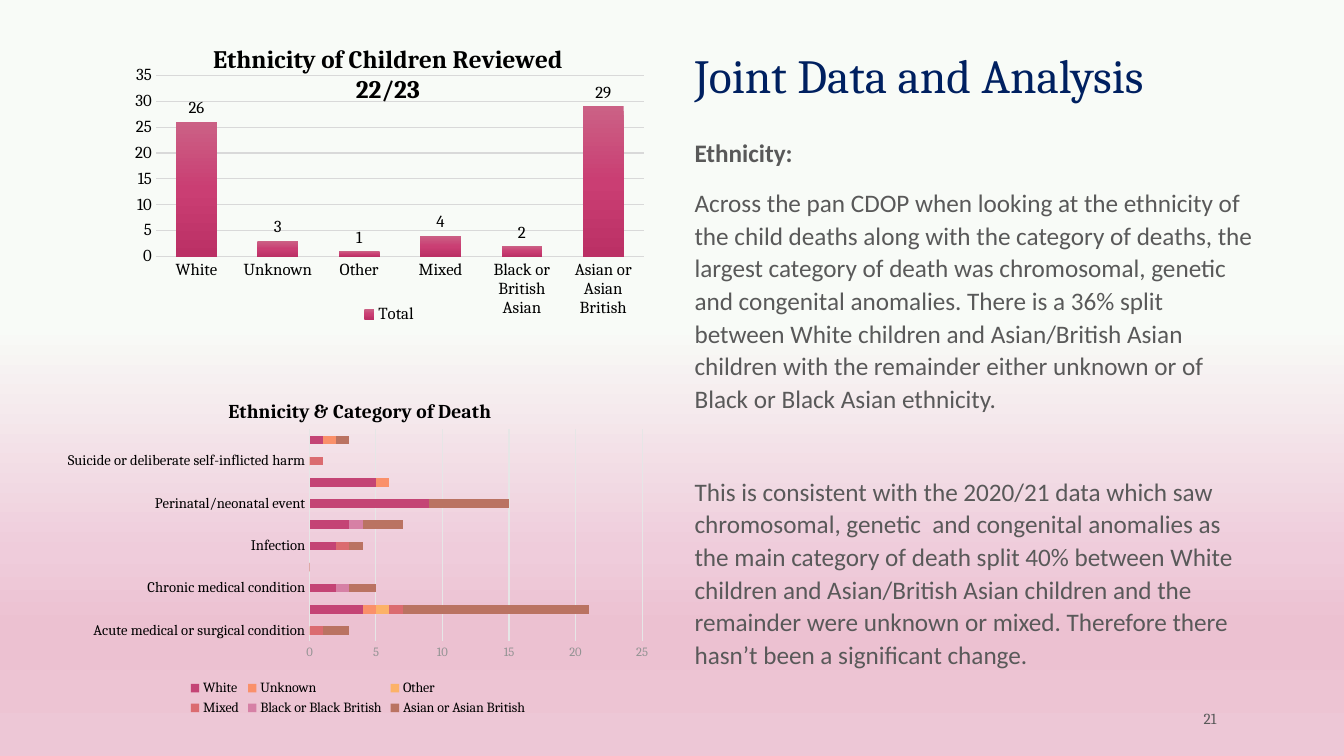
from lxml import etree
from pptx import Presentation
from pptx import util as u
from pptx.chart.data import CategoryChartData
from pptx.dml.color import RGBColor
from pptx.enum import chart as ch, text as t
from pptx.oxml.ns import qn

# Content
HEADING = "Joint Data and Analysis"
PAGE = "21"
BODY = [  # text, bold, line spacing, space before
    ("Ethnicity:", True, 0.9, 0),
    ("Across the pan CDOP when looking at the ethnicity of the child deaths along with the "
     "category of deaths, the largest category of death was chromosomal, genetic and congenital "
     "anomalies. There is a 36% split between White children and Asian/British Asian children "
     "with the remainder either unknown or of Black or Black Asian ethnicity.", False, 1.08, 12),
    ("This is consistent with the 2020/21 data which saw chromosomal, genetic  and congenital "
     "anomalies as the main category of death split 40% between White children and Asian/British "
     "Asian children and the remainder were unknown or mixed. Therefore there hasn’t been a "
     "significant change.", False, 1.08, 43),
]
REVIEWED = {"White": 26, "Unknown": 3, "Other": 1, "Mixed": 4,
            "Black or British Asian": 2, "Asian or Asian British": 29}
CATEGORIES = [
    "Acute medical or surgical condition",
    "Chromosomal, genetic & congenital anomalies",
    "Chronic medical condition",
    "Deliberately inflicted injury, abuse or neglect",
    "Infection",
    "Malignancy",
    "Perinatal/neonatal event",
    "Sudden unexpected, unexplained death",
    "Suicide or deliberate self-inflicted harm",
    "Trauma & other external factors, including medical/surgical",
]
DEATHS = {
    "White": (0, 4, 2, 0, 2, 3, 9, 5, 0, 1),
    "Unknown": (0, 1, 0, 0, 0, 0, 0, 1, 0, 1),
    "Other": (0, 1, 0, 0, 0, 0, 0, 0, 0, 0),
    "Mixed": (1, 1, 0, 0, 1, 0, 0, 0, 1, 0),
    "Black or Black British": (0, 0, 1, 0, 0, 1, 0, 0, 0, 0),
    "Asian or Asian British": (2, 14, 2, 0, 1, 3, 6, 0, 0, 1),
}

# Colours
NAVY = RGBColor(0x00, 0x20, 0x60)
GREY = RGBColor(0x59, 0x59, 0x59)
PALE_GREY = RGBColor(0x93, 0x93, 0x93)
BLACK = RGBColor(0x00, 0x00, 0x00)
GRID = RGBColor(0xD9, 0xD9, 0xD9)
LIGHT_GRID = RGBColor(0xE6, 0xE6, 0xE6)
ETHNICITY_COLOURS = [RGBColor(0xC4, 0x44, 0x75), RGBColor(0xFA, 0x90, 0x6A),
                     RGBColor(0xFC, 0xB2, 0x68), RGBColor(0xDB, 0x6B, 0x70),
                     RGBColor(0xD6, 0x80, 0xA5), RGBColor(0xBA, 0x73, 0x62)]
BACKDROP = [(43, RGBColor(0xF8, 0xFB, 0xF7)), (73, RGBColor(0xEF, 0xCC, 0xDB)),
            (83, RGBColor(0xEC, 0xC1, 0xD1)), (100, RGBColor(0xED, 0xC7, 0xD6))]
COLUMN_SHADES = [(0, RGBColor(0xCB, 0x61, 0x85)), (50, RGBColor(0xCA, 0x3E, 0x73)),
                 (100, RGBColor(0xBB, 0x30, 0x65))]


def style(font, size, colour=BLACK, name="Cambria", bold=False):
    font.size, font.name, font.bold = u.Pt(size), name, bold
    font.color.rgb = colour


def write(paragraph, words, align=None, **font_format):
    run = paragraph.add_run()
    run.text = words
    paragraph.alignment = align
    style(run.font, **font_format)


def box(shape, left, top, width, height):
    shape.left, shape.top = u.Cm(left), u.Cm(top)
    shape.width, shape.height = u.Cm(width), u.Cm(height)


def shade(fill, owner, stops):
    """Give a fill a top-to-bottom gradient; owner is the element that holds it."""
    fill.gradient()
    gradient = owner.xpath(".//a:gradFill")[0]
    for part in list(gradient):
        gradient.remove(part)
    stop_list = etree.SubElement(gradient, qn("a:gsLst"))
    for percent, colour in stops:
        stop = etree.SubElement(stop_list, qn("a:gs"), pos=str(percent * 1000))
        etree.SubElement(stop, qn("a:srgbClr"), val=str(colour))
    etree.SubElement(gradient, qn("a:lin"), ang="5400000", scaled="0")


def place(part, inner=False, **fractions):
    """Fix a chart part at fractions of the chart's size."""
    layout = part.find(qn("c:layout"))
    if layout is None:
        layout = etree.Element(qn("c:layout"))
        part.insert(0, layout)
    manual = etree.SubElement(layout, qn("c:manualLayout"))
    if inner:
        etree.SubElement(manual, qn("c:layoutTarget"), val="inner")
    for key in "xy":
        etree.SubElement(manual, qn(f"c:{key}Mode"), val="edge")
    for key, value in fractions.items():
        etree.SubElement(manual, qn(f"c:{key}"), val=str(value))


def bar_chart(slide, kind, area, categories, series, title_lines, title_size, title_at,
              plot_at, top_value, gap, overlap, sizes, value_colour, grid_colour):
    data = CategoryChartData()
    data.categories = categories
    for name, values in series.items():
        data.add_series(name, values)
    chart = slide.shapes.add_chart(kind, *map(u.Cm, area), data).chart
    style(chart.font, 10, GREY)
    # Title
    heading = chart.chart_title.text_frame
    for i, line in enumerate(title_lines):
        paragraph = heading.add_paragraph() if i else heading.paragraphs[0]
        write(paragraph, line, size=title_size, bold=True)
    place(chart.element.xpath(".//c:title")[0], **title_at)
    place(chart.element.xpath(".//c:plotArea")[0], inner=True, **plot_at)
    # Axes
    category_size, value_size, legend_size = sizes
    names, values = chart.category_axis, chart.value_axis
    for axis in (names, values):
        axis.major_tick_mark = axis.minor_tick_mark = ch.XL_TICK_MARK.NONE
    style(names.tick_labels.font, category_size)
    style(values.tick_labels.font, value_size, value_colour)
    values.minimum_scale, values.maximum_scale, values.major_unit = 0, top_value, 5
    values.format.line.fill.background()
    for line in (names.format.line, values.major_gridlines.format.line):
        line.color.rgb, line.width = grid_colour, u.Pt(0.75)
    # Legend and bars
    chart.has_legend = True
    chart.legend.position = ch.XL_LEGEND_POSITION.BOTTOM
    chart.legend.include_in_layout = False
    style(chart.legend.font, legend_size)
    bars = chart.plots[0]
    bars.gap_width, bars.overlap, bars.vary_by_categories = gap, overlap, False
    return chart


def main():
    deck = Presentation()
    deck.slide_width, deck.slide_height = u.Cm(33.87), u.Cm(19.05)
    slide = deck.slides.add_slide(deck.slide_layouts[1])
    shade(slide.background.fill, slide.element, BACKDROP)

    # Heading
    title, body = slide.placeholders
    box(title, 17.25, 1, 12.95, 1.75)
    title.text_frame.auto_size = t.MSO_AUTO_SIZE.NONE
    title.text_frame.vertical_anchor = t.MSO_ANCHOR.BOTTOM
    heading = title.text_frame.paragraphs[0]
    heading.line_spacing = 0.9
    write(heading, HEADING, t.PP_ALIGN.LEFT, size=34, colour=NAVY)

    # Commentary
    box(body, 17.25, 3.43, 14.73, 14.7)
    body.text_frame.auto_size = t.MSO_AUTO_SIZE.NONE
    for i, (words, bold, spacing, before) in enumerate(BODY):
        paragraph = body.text_frame.add_paragraph() if i else body.text_frame.paragraphs[0]
        write(paragraph, words, size=18, colour=GREY, name="Calibri", bold=bold)
        paragraph.line_spacing, paragraph.space_before = spacing, u.Pt(before)
        properties = paragraph._p.get_or_add_pPr()
        properties.set("marL", "0")
        properties.set("indent", "0")
        etree.SubElement(properties, qn("a:buNone"))

    # Page number
    page = slide.shapes.add_textbox(u.Cm(27.86), u.Cm(17.78), u.Cm(3.05), u.Cm(0.64)).text_frame
    page.word_wrap, page.vertical_anchor = True, t.MSO_ANCHOR.MIDDLE
    write(page.paragraphs[0], PAGE, t.PP_ALIGN.RIGHT, size=11, colour=GREY)

    # Children reviewed, by ethnicity
    reviewed = bar_chart(
        slide, ch.XL_CHART_TYPE.COLUMN_CLUSTERED, (2.97, 0.64, 13.67, 7.62),
        list(REVIEWED), {"Total": list(REVIEWED.values())},
        ["Ethnicity of Children Reviewed", "22/23"], 18, dict(x=0.17, y=0.05),
        dict(x=0.07, y=0.165, w=0.9, h=0.6), 35, 100, -24, (12, 12, 12), BLACK, GRID)
    total = reviewed.plots[0].series[0]
    shade(total.format.fill, reviewed.element, COLUMN_SHADES)
    labels = total.data_labels
    labels.show_value, labels.position = True, ch.XL_LABEL_POSITION.OUTSIDE_END
    style(labels.font, 12)

    # Category of death, by ethnicity
    deaths = bar_chart(
        slide, ch.XL_CHART_TYPE.BAR_STACKED, (1.4, 9.53, 15.24, 8.61), CATEGORIES, DEATHS,
        ["Ethnicity & Category of Death"], 14, dict(x=0.28, y=0.05),
        dict(x=0.42, y=0.15, w=0.55, h=0.62), 25, 150, 100, (10.5, 9, 10), PALE_GREY, LIGHT_GRID)
    for ethnicity, colour in zip(deaths.plots[0].series, ETHNICITY_COLOURS):
        ethnicity.format.fill.solid()
        ethnicity.format.fill.fore_color.rgb = colour

    deck.save("out.pptx")


if __name__ == "__main__":
    main()
